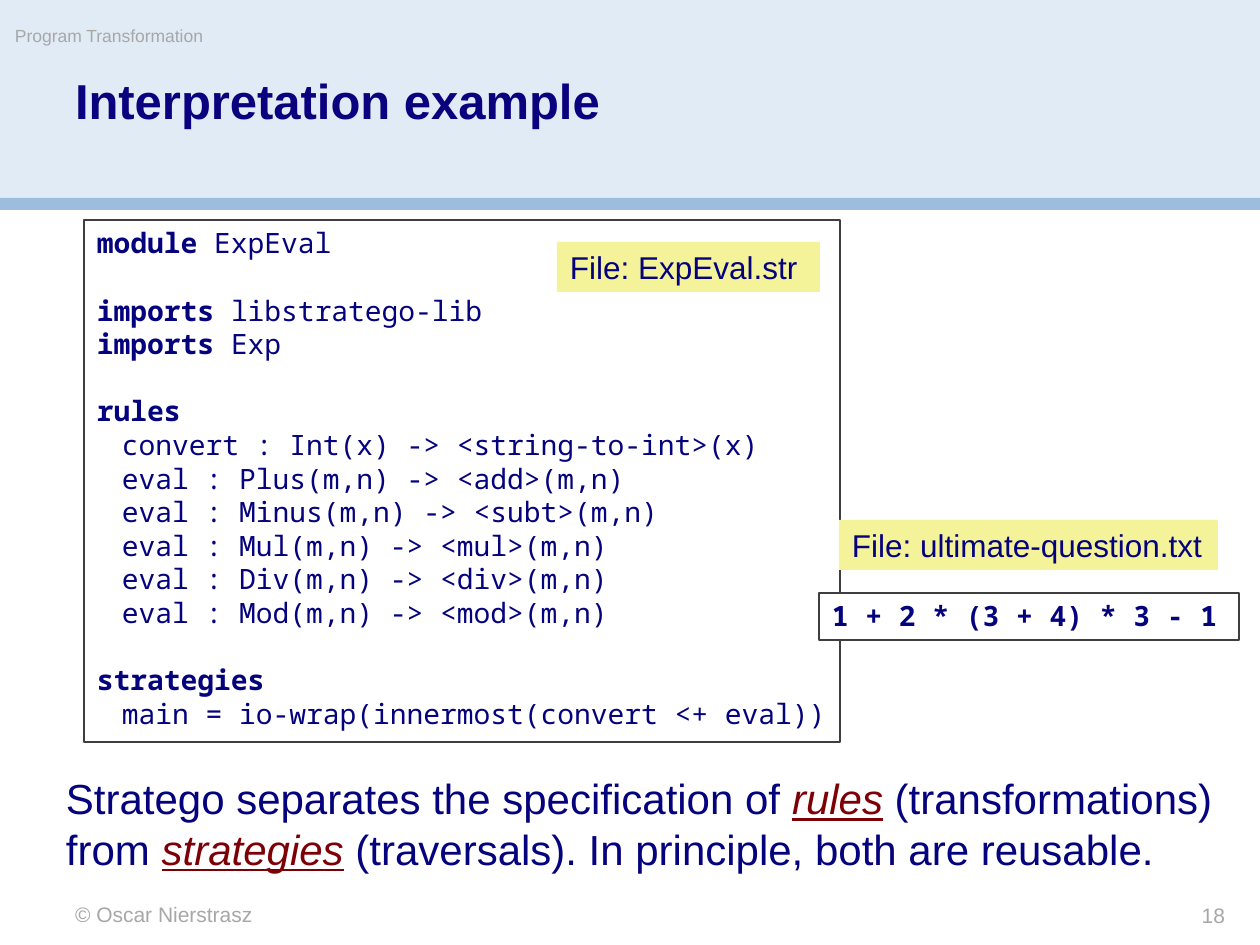
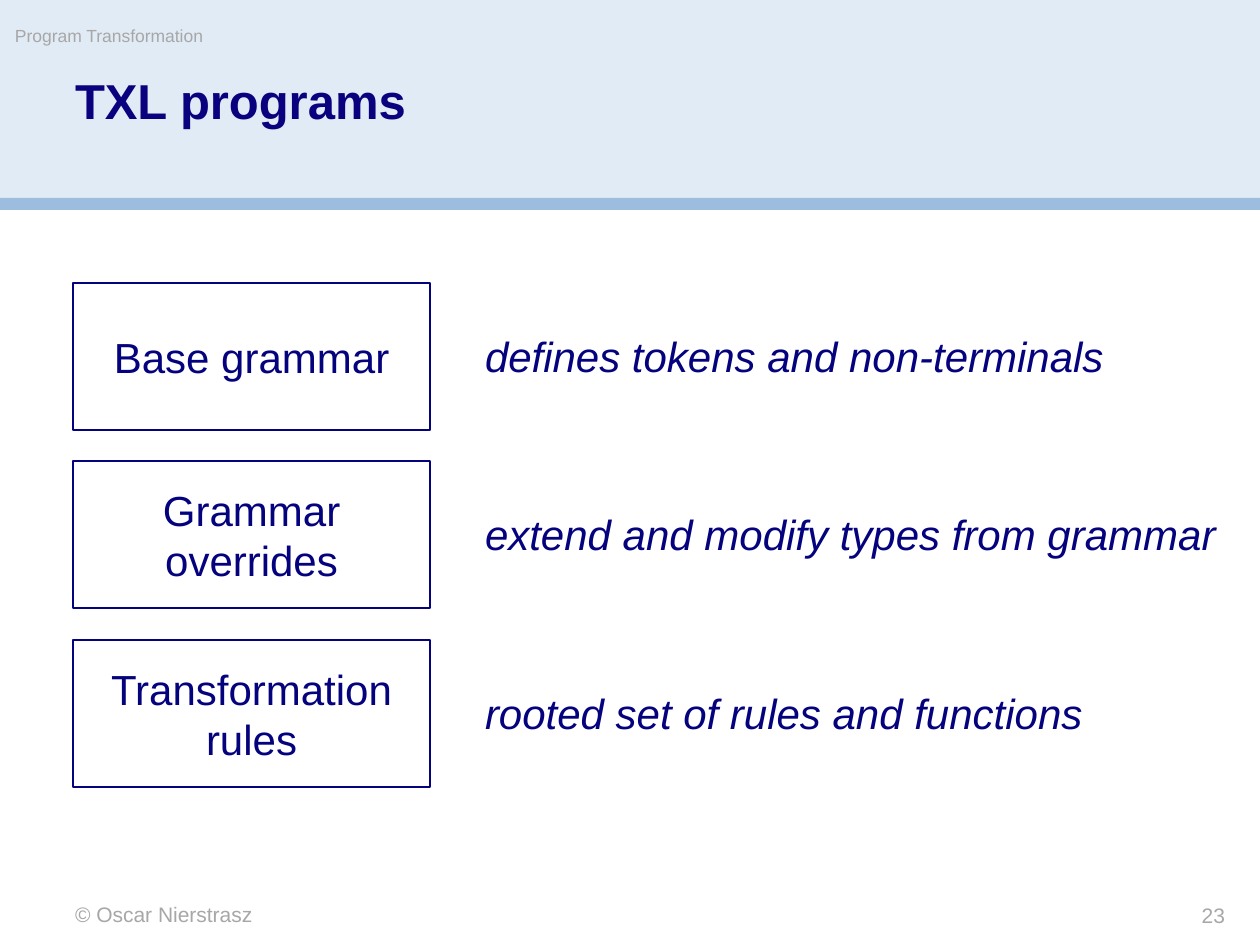
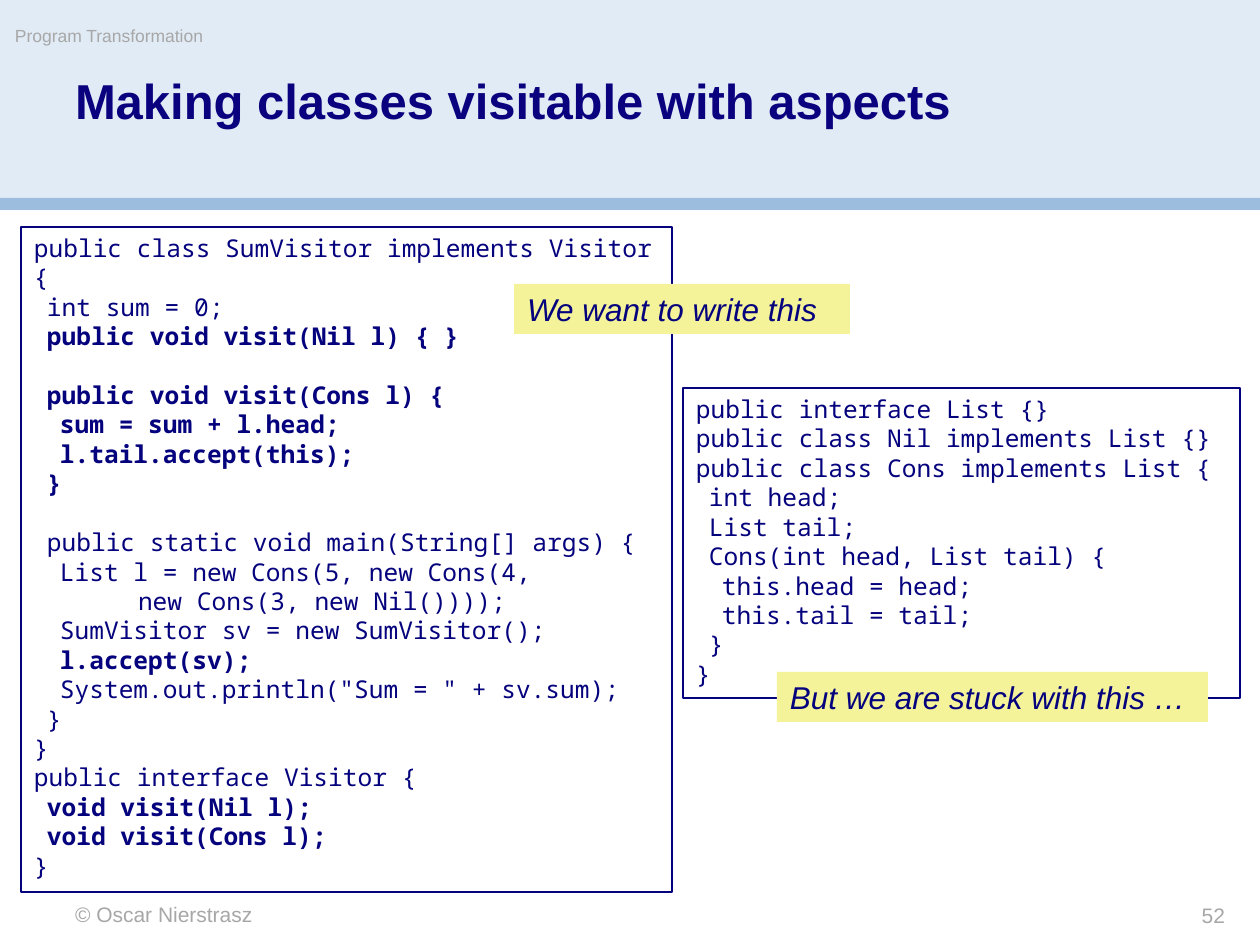
from dataclasses import dataclass

from pptx import Presentation
from pptx.dml.color import RGBColor
from pptx.enum.shapes import MSO_SHAPE
from pptx.enum.text import MSO_ANCHOR, PP_ALIGN
from pptx.util import Emu, Pt

SCALE = 914400 / 126
SANS, MONO = "Arial", "Noto Sans Mono"
NAVY, TITLE, RED, GREY, DARK = "05027D", "0A017F", "7E0007", "A7A7A7", "3E3E3E"
WHITE, YELLOW, PALE, BAND = "FFFFFF", "F5F399", "E1EBF5", "9CBDDE"
INSET_X, INSET_Y = 13, 6

EXP_EVAL = """**module **ExpEval

**imports **libstratego-lib
**imports **Exp

**rules**
 convert : Int(x) -> <string-to-int>(x)
 eval : Plus(m,n) -> <add>(m,n)
 eval : Minus(m,n) -> <subt>(m,n)
 eval : Mul(m,n) -> <mul>(m,n)
 eval : Div(m,n) -> <div>(m,n)
 eval : Mod(m,n) -> <mod>(m,n)

**strategies**
 main = io-wrap(innermost(convert <+ eval))"""

SUM_VISITOR = """public class SumVisitor implements Visitor {
 int sum = 0;
 **public void visit(Nil l) { }**

 **public void visit(Cons l) {**
  **sum = sum + l.head;**
  **l.tail.accept(this);**
 **}**

 public static void main(String[] args) {
  List l = new Cons(5, new Cons(4,
        new Cons(3, new Nil())));
  SumVisitor sv = new SumVisitor();
  **l.accept(sv);**
  System.out.println("Sum = " + sv.sum);
 }
}
public interface Visitor {
 **void visit(Nil l);**
 **void visit(Cons l);**
}"""

LIST_CLASSES = """public interface List {}
public class Nil implements List {}
public class Cons implements List {
 int head;
 List tail;
 Cons(int head, List tail) {
  this.head = head;
  this.tail = tail;
 }
}"""


@dataclass(frozen=True)
class Style:
    """Look of a block of text and its frame."""
    size: int
    color: str = NAVY
    font: str = SANS
    bold: bool = False
    italic: bool = False
    emphasis: bool = False
    align: PP_ALIGN = PP_ALIGN.LEFT
    middle: bool = False
    inset: bool = True
    spacing: float | None = None
    indent: int = 0
    fill: str | None = None
    line: str | None = None


@dataclass(frozen=True)
class Box:
    """A text with its place in px and its style."""
    left: int
    top: int
    width: int
    height: int
    text: str
    style: Style


HEADING = Style(28, TITLE, bold=True, inset=False, spacing=0.9)
HEADER = Style(10, GREY, inset=False)
FOOTER = Style(12, GREY, inset=False)
PAGE = Style(12, GREY, inset=False, align=PP_ALIGN.RIGHT)
BODY = Style(24, emphasis=True)
EXPLANATION = Style(24, italic=True)
PART = Style(24, align=PP_ALIGN.CENTER, middle=True, fill=WHITE, line=NAVY)
FILE_LABEL = Style(18, fill=YELLOW)
REMARK = Style(18, italic=True, fill=YELLOW)
STRATEGO = Style(16, font=MONO, indent=25, fill=WHITE, line=DARK)
INPUT = Style(16, font=MONO, bold=True, fill=WHITE, line=DARK)
JAVA = Style(14, font=MONO, indent=13, fill=WHITE, line=NAVY)
JAVA_CLEAR = Style(14, font=MONO, indent=13, line=NAVY)


def px(n: int) -> Emu:
    """Turn px into EMU."""
    return Emu(round(n * SCALE))


def rgb(color: str) -> RGBColor:
    """Turn a hex string into a colour."""
    return RGBColor.from_string(color)


def add_rect(s, left: int, top: int, width: int, height: int,
             fill: str | None = None, line: str | None = None):
    """Draw a rectangle with an optional fill and outline."""
    sp = s.shapes.add_shape(MSO_SHAPE.RECTANGLE, px(left), px(top), px(width), px(height))
    sp.shadow.inherit = False
    if fill:
        sp.fill.solid()
        sp.fill.fore_color.rgb = rgb(fill)
    else:
        sp.fill.background()
    if line:
        sp.line.color.rgb = rgb(line)
        sp.line.width = Pt(0.75)
    else:
        sp.line.fill.background()
    return sp


def add_runs(p, text: str, style: Style) -> None:
    """Fill a paragraph, marking the parts between double asterisks."""
    for i, part in enumerate(text.split("**")):
        if not part:
            continue
        marked = i % 2 == 1
        emphasised = marked and style.emphasis
        r = p.add_run()
        r.text = part
        r.font.name = style.font
        r.font.size = Pt(style.size)
        r.font.bold = style.bold or (marked and not style.emphasis)
        r.font.italic = style.italic or emphasised
        r.font.underline = emphasised
        r.font.color.rgb = rgb(RED if emphasised else style.color)


def add_text(tf, text: str, style: Style) -> None:
    """Write lines, turning leading spaces into indents and empty lines into gaps."""
    p, gap = tf.paragraphs[0], 0.0
    for n, line in enumerate(text.split("\n")):
        if not line:
            gap = 1.2 * style.size
            continue
        if n:
            p = tf.add_paragraph()
        content = line.lstrip(" ")
        level = len(line) - len(content)
        if level:
            p._p.get_or_add_pPr().set("marL", str(px(level * style.indent)))
        p.alignment = style.align
        p.line_spacing = style.spacing
        p.space_before = Pt(gap)
        gap = 0.0
        add_runs(p, content, style)


def add_box(s, box: Box) -> None:
    """Draw a framed or plain text box."""
    style = box.style
    place = (box.left, box.top, box.width, box.height)
    if style.fill or style.line:
        sp = add_rect(s, *place, style.fill, style.line)
    else:
        sp = s.shapes.add_textbox(*map(px, place))
    tf = sp.text_frame
    tf.word_wrap = True
    tf.vertical_anchor = MSO_ANCHOR.MIDDLE if style.middle else MSO_ANCHOR.TOP
    tf.margin_left = tf.margin_right = px(INSET_X if style.inset else 0)
    tf.margin_top = tf.margin_bottom = px(INSET_Y if style.inset else 0)
    add_text(tf, box.text, style)


def add_slide(prs, title: str, number: int, boxes: list[Box]) -> None:
    """Add a slide with the shared bands, title and footers, then its boxes."""
    s = prs.slides.add_slide(prs.slide_layouts[6])
    add_rect(s, 0, 0, 1260, 199, PALE)
    add_rect(s, 0, 198, 1260, 12, BAND)
    frame = [
        Box(75, 77, 1113, 112, title, HEADING),
        Box(75, 902, 525, 25, "© Oscar Nierstrasz", FOOTER),
        Box(15, 25, 743, 35, "Program Transformation", HEADER),
        Box(1039, 903, 186, 25, str(number), PAGE),
    ]
    for box in frame + boxes:
        add_box(s, box)


def interpretation_boxes() -> list[Box]:
    """Return the Stratego example and its input."""
    return [
        Box(84, 220, 756, 522, EXP_EVAL, STRATEGO),
        Box(557, 242, 263, 50, "File: ExpEval.str", FILE_LABEL),
        Box(53, 767, 1176, 115,
            "Stratego separates the specification of **rules** (transformations) "
            "from **strategies** (traversals). In principle, both are reusable.", BODY),
        Box(819, 593, 420, 47, "1 + 2 * (3 + 4) * 3 - 1", INPUT),
        Box(839, 520, 379, 50, "File: ultimate-question.txt", FILE_LABEL),
    ]


def txl_boxes() -> list[Box]:
    """Return the parts of a TXL program, each with its explanation."""
    parts = [
        ("Base grammar", "defines tokens and non-terminals"),
        ("Grammar overrides", "extend and modify types from grammar"),
        ("Transformation rules", "rooted set of rules and functions"),
    ]
    boxes = []
    for i, (name, explanation) in enumerate(parts):
        top = 283 + round(178.5 * i)
        boxes.append(Box(73, top, 357, 147, name, PART))
        boxes.append(Box(472, top + 42, 775, 64, explanation, EXPLANATION))
    return boxes


def visitor_boxes() -> list[Box]:
    """Return the wanted visitor and the given classes."""
    return [
        Box(21, 227, 651, 665, SUM_VISITOR, JAVA),
        Box(683, 388, 557, 310, LIST_CLASSES, JAVA_CLEAR),
        Box(514, 284, 336, 50, "We want to write this", REMARK),
        Box(777, 672, 431, 50, "But we are stuck with this …", REMARK),
    ]


def main() -> None:
    """Build and save the slides."""
    prs = Presentation()
    prs.slide_width, prs.slide_height = px(1260), px(945)
    add_slide(prs, "Interpretation example", 18, interpretation_boxes())
    add_slide(prs, "TXL programs", 23, txl_boxes())
    add_slide(prs, "Making classes visitable with aspects", 52, visitor_boxes())
    prs.save("out.pptx")


if __name__ == "__main__":
    main()
